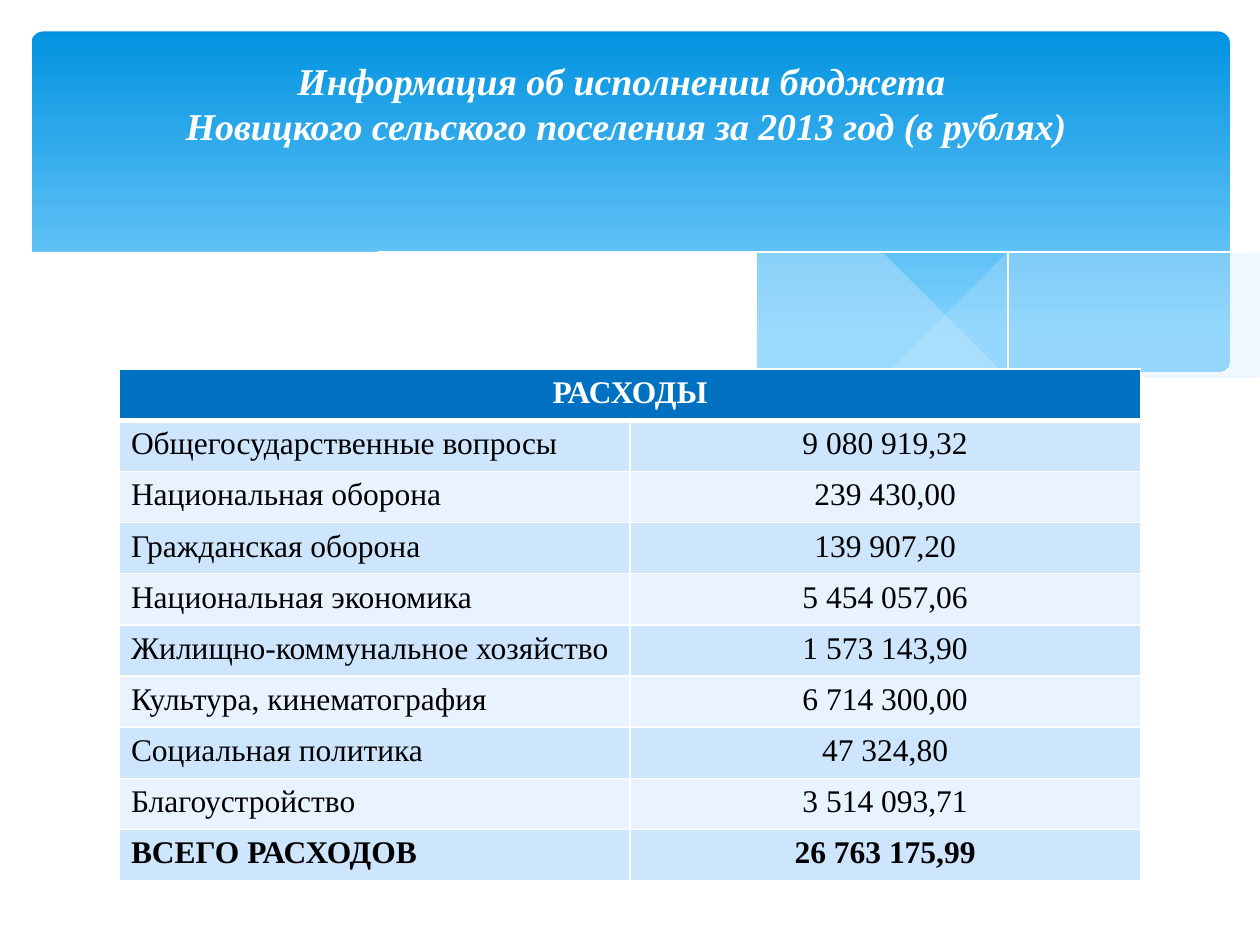
from lxml.etree import SubElement
from pptx import Presentation
from pptx.dml.color import RGBColor
from pptx.enum.shapes import MSO_SHAPE
from pptx.enum.text import MSO_ANCHOR, MSO_AUTO_SIZE, PP_ALIGN
from pptx.oxml.ns import qn
from pptx.util import Inches, Pt

COLORS = {
    "white": "FFFFFF", "black": "000000",
    "sky_top": "0293E0", "sky_bottom": "83D3FE", "mist": "C6E7FC",
    "header": "0070C0", "band_dark": "CEE5FE", "band_light": "E8F3FF",
}

TITLE = "Информация об исполнении бюджета \nНовицкого сельского поселения за 2013 год (в рублях)"
EXPENSES = [
    ("Общегосударственные вопросы", "9 080 919,32"),
    ("Национальная оборона", "239 430,00"),
    ("Гражданская оборона", "139 907,20"),
    ("Национальная экономика", "5 454 057,06"),
    ("Жилищно-коммунальное хозяйство", "1 573 143,90"),
    ("Культура, кинематография", "6 714 300,00"),
    ("Социальная политика", "47 324,80"),
    ("Благоустройство", "3 514 093,71"),
    ("ВСЕГО РАСХОДОВ", "26 763 175,99"),
]

# Knots of the wave edges, in inches
RIGHT_TOP = [(9.76, 2), (9.35, 2.07), (8.61, 2.23), (7.79, 2.42), (7.06, 2.57), (6.61, 2.65)]
RIGHT_BOTTOM = [(6.61, 2.65), (7.19, 2.72), (7.69, 2.77), (8.14, 2.78), (8.63, 2.75),
                (9.13, 2.67), (9.49, 2.57), (9.76, 2.47)]
MIDDLE_TOP = [(8.93, 2.73), (8.07, 2.6), (7.06, 2.4), (6.29, 2.22), (5.55, 2.05),
              (4.89, 1.94), (4.2, 1.87), (3.61, 1.85), (2.86, 1.91)]
MIDDLE_BOTTOM = [(2.86, 1.91), (3.62, 2.03), (4.49, 2.22), (5.3, 2.4), (6.18, 2.58),
                 (6.95, 2.7), (7.61, 2.77), (8.18, 2.78), (8.93, 2.73)]
FALLING_LINE = [(3.09, 1.95), (3.53, 1.89), (4.16, 1.87), (4.89, 1.9), (5.82, 2),
                (6.65, 2.13), (7.6, 2.33), (8.31, 2.51), (9.07, 2.72)]
RISING_LINE = [(6.13, 2.57), (6.72, 2.41), (7.48, 2.23), (8.36, 2.04), (9.1, 1.92), (9.75, 1.85)]
FRONT_EDGE = [(0.23, 2.13), (0.59, 1.99), (1.06, 1.89), (1.77, 1.84), (2.5, 1.86),
              (3.4, 1.97), (4.47, 2.2), (5.55, 2.45), (6.48, 2.62), (7.26, 2.72),
              (8.09, 2.77), (8.75, 2.73), (9.3, 2.62), (9.77, 2.46)]


def color(name):
    return RGBColor.from_string(COLORS[name])


def smooth(knots, steps=6):
    """Catmull-Rom curve through the knots."""
    padded = [knots[0], *knots, knots[-1]]
    curve = [knots[0]]
    for a, b, c, d in zip(padded, padded[1:], padded[2:], padded[3:]):
        for step in range(1, steps + 1):
            t = step / steps
            curve.append(tuple(
                (2 * q + (r - p) * t + (2 * p - 5 * q + 4 * r - s) * t ** 2
                 + (3 * q - p - 3 * r + s) * t ** 3) / 2
                for p, q, r, s in zip(a, b, c, d)))
    return curve


def write(frame, text, size=18, ink="black", bold=False, italic=False, align=PP_ALIGN.LEFT):
    paragraph = frame.paragraphs[0]
    paragraph.alignment = align
    for index, line in enumerate(text.split("\n")):
        if index:
            paragraph.add_line_break()
        run = paragraph.add_run()
        run.text = line
        run.font.name = "Times New Roman"
        run.font.size = Pt(size)
        run.font.bold, run.font.italic = bold, italic
        run.font.color.rgb = color(ink)


class BudgetSlide:
    def __init__(self, presentation):
        self.slide = presentation.slides.add_slide(presentation.slide_layouts[5])
        self.shapes = self.slide.shapes

    def sky(self, left, top, width, height):
        panel = self.shapes.add_shape(MSO_SHAPE.ROUNDED_RECTANGLE, Inches(left), Inches(top),
                                      Inches(width), Inches(height))
        panel.adjustments[0] = 0.034
        panel.shadow.inherit = False
        panel.line.fill.background()
        panel.fill.gradient()
        panel.fill.gradient_angle = 270
        for stop, position, name in zip(panel.fill.gradient_stops, (0, 0.9),
                                        ("sky_top", "sky_bottom")):
            stop.position = position
            stop.color.rgb = color(name)

    def wave(self, points, fill=None, opacity=100):
        """Filled area, or an open hairline when there is no fill."""
        builder = self.shapes.build_freeform(*points[0], scale=Inches(1))
        builder.add_line_segments(points[1:], close=fill is not None)
        shape = builder.convert_to_shape()
        shape.shadow.inherit = False
        if fill is None:
            shape.fill.background()
            shape.line.color.rgb = color("white")
            shape.line.width = Pt(0)
            return
        shape.line.fill.background()
        shape.fill.solid()
        shape.fill.fore_color.rgb = color(fill)
        if opacity < 100:
            tint = shape._element.spPr.find(".//" + qn("a:srgbClr"))
            SubElement(tint, qn("a:alpha"), val=str(opacity * 1000))

    def title(self, text, left, top, width, height):
        heading = self.shapes.title
        heading.left, heading.top = Inches(left), Inches(top)
        heading.width, heading.height = Inches(width), Inches(height)
        frame = heading.text_frame
        frame.word_wrap = True
        frame.auto_size = MSO_AUTO_SIZE.NONE
        frame.vertical_anchor = MSO_ANCHOR.MIDDLE
        write(frame, text, size=21.6, ink="white", bold=True, italic=True, align=PP_ALIGN.CENTER)
        # Bring the heading in front of the backdrop
        self.shapes._spTree.append(heading._element)

    def cell(self, cell, text, fill, bottom=1, **text_format):
        cell.margin_left = cell.margin_right = Inches(0.09)
        cell.margin_top = cell.margin_bottom = Inches(0.05)
        properties = cell._tc.get_or_add_tcPr()
        for side, width in (("L", 1), ("R", 1), ("T", 1), ("B", bottom)):
            border = SubElement(properties, qn(f"a:ln{side}"), w=str(Pt(width)))
            SubElement(SubElement(border, qn("a:solidFill")), qn("a:srgbClr"),
                       val=COLORS["white"])
        cell.fill.solid()
        cell.fill.fore_color.rgb = color(fill)
        write(cell.text_frame, text, **text_format)

    def expense_table(self, heading, rows, left, top, width, height):
        table = self.shapes.add_table(len(rows) + 1, 2, Inches(left), Inches(top),
                                      Inches(width), Inches(height)).table
        table.cell(0, 0).merge(table.cell(0, 1))
        self.cell(table.cell(0, 0), heading, "header", bottom=3,
                  ink="white", bold=True, align=PP_ALIGN.CENTER)
        for number, (item, amount) in enumerate(rows, start=1):
            band = "band_dark" if number % 2 else "band_light"
            total = number == len(rows)
            self.cell(table.cell(number, 0), item, band, bold=total)
            self.cell(table.cell(number, 1), amount, band, bold=total, align=PP_ALIGN.CENTER)


def main():
    presentation = Presentation()
    presentation.slide_width, presentation.slide_height = Inches(10), Inches(7.5)
    budget = BudgetSlide(presentation)

    # Backdrop
    budget.sky(0.25, 0.25, 9.51, 2.7)
    budget.wave(smooth(RIGHT_TOP) + smooth(RIGHT_BOTTOM), "mist", opacity=29)
    budget.wave(smooth(MIDDLE_TOP) + smooth(MIDDLE_BOTTOM), "mist", opacity=40)
    budget.wave(smooth(FALLING_LINE))
    budget.wave(smooth(RISING_LINE))
    budget.wave(smooth(FRONT_EDGE) + [(9.77, 3.29), (0.23, 3.29)], "white")

    # Content
    budget.expense_table("РАСХОДЫ", EXPENSES, 0.95, 2.93, 8.1, 4.06)
    budget.title(TITLE, 0.47, 0.16, 9, 1.31)

    presentation.save("out.pptx")


if __name__ == "__main__":
    main()
